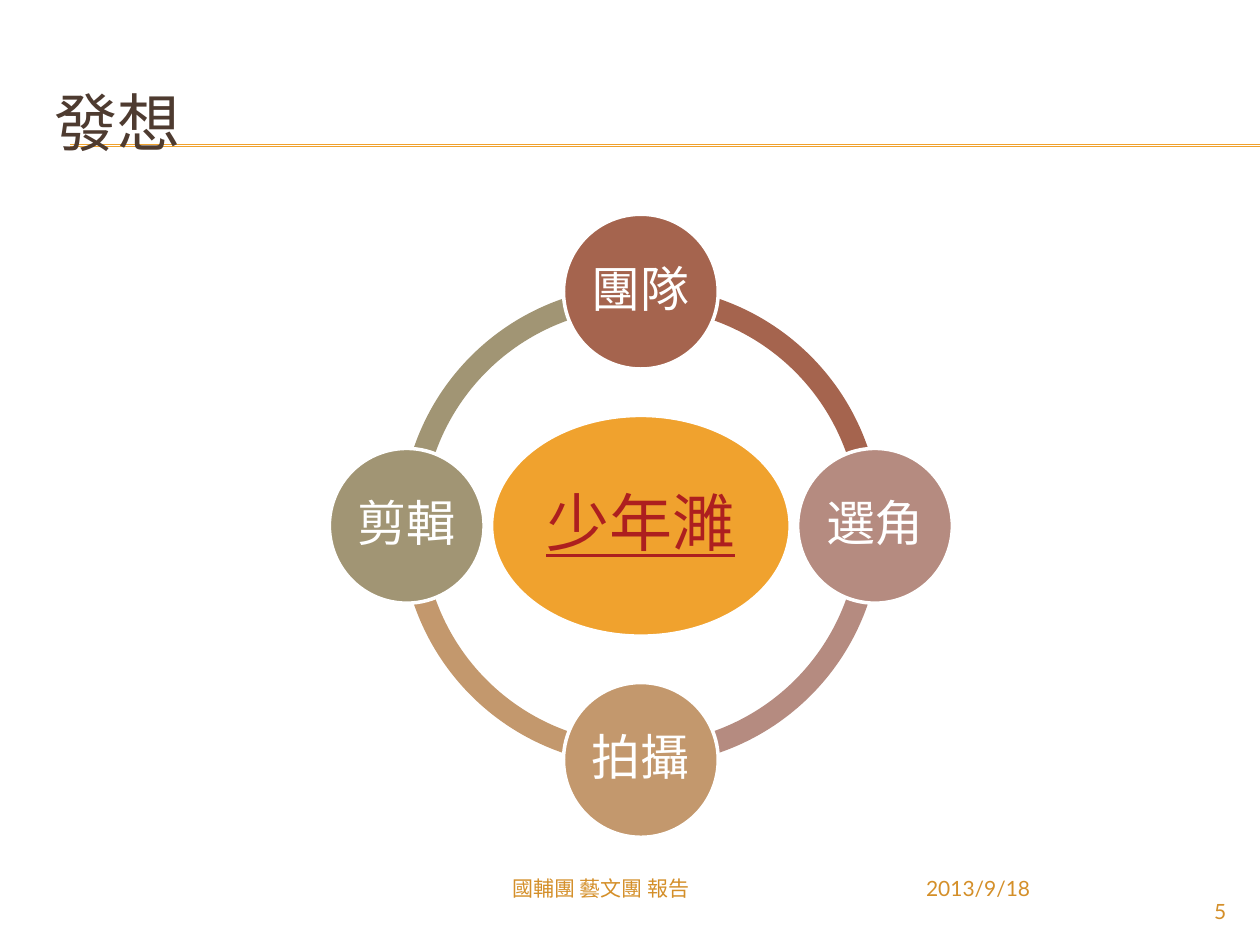
"""Build the slide that shows four production steps in a ring around a film title."""
from dataclasses import dataclass
from math import cos, radians, sin

from lxml.etree import SubElement
from pptx import Presentation
from pptx.dml.color import RGBColor
from pptx.enum.shapes import MSO_CONNECTOR as Connector, MSO_SHAPE as Shape
from pptx.enum.text import MSO_ANCHOR as Anchor, PP_ALIGN as Align
from pptx.oxml.ns import qn
from pptx.util import Cm, Pt

WHITE = RGBColor(0xFF, 0xFF, 0xFF)
ORANGE = RGBColor(0xF0, 0xA2, 0x2E)
BROWN = RGBColor(0x4E, 0x3B, 0x30)
RED = RGBColor(0xAD, 0x1F, 0x1F)
AMBER = RGBColor(0xD4, 0x8F, 0x29)
RUST = RGBColor(0xA5, 0x64, 0x4E)
ROSE = RGBColor(0xB5, 0x8B, 0x80)
TAN = RGBColor(0xC3, 0x98, 0x6D)
OLIVE = RGBColor(0xA1, 0x95, 0x74)

LATIN_FONT = "Lato"
TITLE_FONT = "Noto Sans CJK JP"
CJK_FONT = "Noto Sans CJK SC"

CENTER_X, CENTER_Y = 12.92, 10.6
ORBIT_RADIUS = 4.72
ARC_SIZE = 9.68
ARC_THICKNESS = 0.046
NODE_SIZE = 3.12
HUB_WIDTH, HUB_HEIGHT = 6.02, 4.45
ANGLE_UNIT = 0.6


@dataclass(frozen=True)
class Step:
    text: str
    color: RGBColor
    angle: int


@dataclass(frozen=True)
class Label:
    text: str
    left: float
    top: float
    width: float
    height: float
    align: Align = Align.LEFT
    size: int = 12
    color: RGBColor = AMBER
    latin: str = LATIN_FONT
    asian: str = CJK_FONT
    anchor: Anchor = Anchor.TOP


STEPS = [
    Step("團隊", RUST, 270),
    Step("選角", ROSE, 0),
    Step("拍攝", TAN, 90),
    Step("剪輯", OLIVE, 180),
]
LABELS = [
    Label("發想", 0.84, 1.27, 24.13, 2.34, size=36, color=BROWN,
          latin=TITLE_FONT, asian=TITLE_FONT, anchor=Anchor.MIDDLE),
    Label("2013/9/18", 18.42, 17.53, 6.98, 0.81),
    Label("國輔團 藝文團 報告", 6.1, 17.53, 8.05, 0.81, Align.RIGHT),
    Label("5", 22.86, 17.98, 2.11, 0.69, Align.RIGHT),
]
RULE_TOPS = [2.92, 2.95]


def format_text(text_frame, size: int, color: RGBColor, align: Align,
                latin: str = CJK_FONT, asian: str = CJK_FONT):
    """Style the only paragraph of a frame and return its run."""
    paragraph = text_frame.paragraphs[0]
    paragraph.alignment = align
    run = paragraph.runs[0]
    run.font.size = Pt(size)
    run.font.color.rgb = color
    run.font.name = latin
    SubElement(run._r.get_or_add_rPr(), qn("a:ea")).set("typeface", asian)
    return run


def add_rule(slide, top: float) -> None:
    """Draw one line under the title."""
    rule = slide.shapes.add_connector(
        Connector.STRAIGHT, Cm(1.42), Cm(top), Cm(25.4), Cm(top))
    rule.line.color.rgb = ORANGE
    rule.line.width = Pt(0.75)
    SubElement(rule._element.spPr, qn("a:effectLst"))


def add_label(slide, label: Label) -> None:
    """Place one text box."""
    box = slide.shapes.add_textbox(
        Cm(label.left), Cm(label.top), Cm(label.width), Cm(label.height))
    text_frame = box.text_frame
    text_frame.word_wrap = True
    text_frame.vertical_anchor = label.anchor
    text_frame.text = label.text
    format_text(text_frame, label.size, label.color, label.align,
                label.latin, label.asian)


def add_centered(slide, kind: Shape, x: float, y: float, width: float,
                 height: float, color: RGBColor):
    """Add a flat filled shape around a center point."""
    shape = slide.shapes.add_shape(
        kind, Cm(x - width / 2), Cm(y - height / 2), Cm(width), Cm(height))
    shape.shadow.inherit = False
    shape.fill.solid()
    shape.fill.fore_color.rgb = color
    return shape


def add_arc(slide, step: Step) -> None:
    """Draw the quarter ring that leads clockwise from a step."""
    arc = add_centered(slide, Shape.BLOCK_ARC, CENTER_X, CENTER_Y,
                       ARC_SIZE, ARC_SIZE, step.color)
    arc.line.fill.background()
    arc.adjustments[0] = step.angle * ANGLE_UNIT
    arc.adjustments[1] = (step.angle + 90) % 360 * ANGLE_UNIT
    arc.adjustments[2] = ARC_THICKNESS


def add_ellipse(slide, text: str, x: float, y: float, width: float,
                height: float, fill: RGBColor, size: int, color: RGBColor):
    """Draw a white-edged ellipse and return the run of its text."""
    ellipse = add_centered(slide, Shape.OVAL, x, y, width, height, fill)
    ellipse.line.color.rgb = WHITE
    ellipse.line.width = Pt(2)
    text_frame = ellipse.text_frame
    text_frame.margin_left = text_frame.margin_right = Cm(0.1)
    text_frame.margin_top = text_frame.margin_bottom = Cm(0.1)
    text_frame.word_wrap = False
    text_frame.vertical_anchor = Anchor.MIDDLE
    text_frame.text = text
    text_frame.paragraphs[0].line_spacing = 0.9
    return format_text(text_frame, size, color, Align.CENTER)


def main() -> None:
    """Build and save the slide."""
    presentation = Presentation()
    presentation.slide_width, presentation.slide_height = Cm(25.4), Cm(19.05)
    slide = presentation.slides.add_slide(presentation.slide_layouts[6])

    for top in RULE_TOPS:
        add_rule(slide, top)
    for step in reversed(STEPS):
        add_arc(slide, step)
    hub_run = add_ellipse(slide, "少年濉", CENTER_X, CENTER_Y,
                          HUB_WIDTH, HUB_HEIGHT, ORANGE, 36, RED)
    hub_run.font.underline = True
    for step in STEPS:
        angle = radians(step.angle)
        add_ellipse(slide, step.text, CENTER_X + ORBIT_RADIUS * cos(angle),
                    CENTER_Y + ORBIT_RADIUS * sin(angle),
                    NODE_SIZE, NODE_SIZE, step.color, 28, WHITE)
    for label in LABELS:
        add_label(slide, label)

    presentation.save("out.pptx")


if __name__ == "__main__":
    main()
